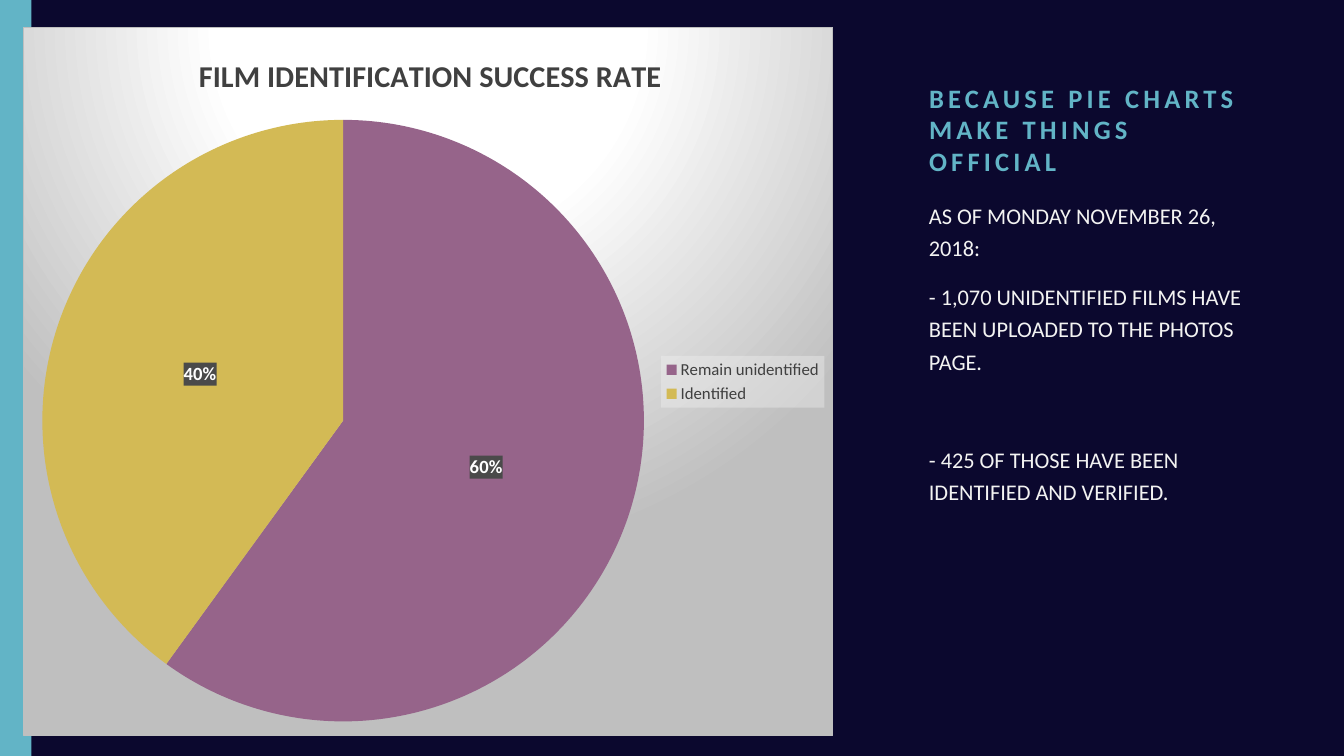
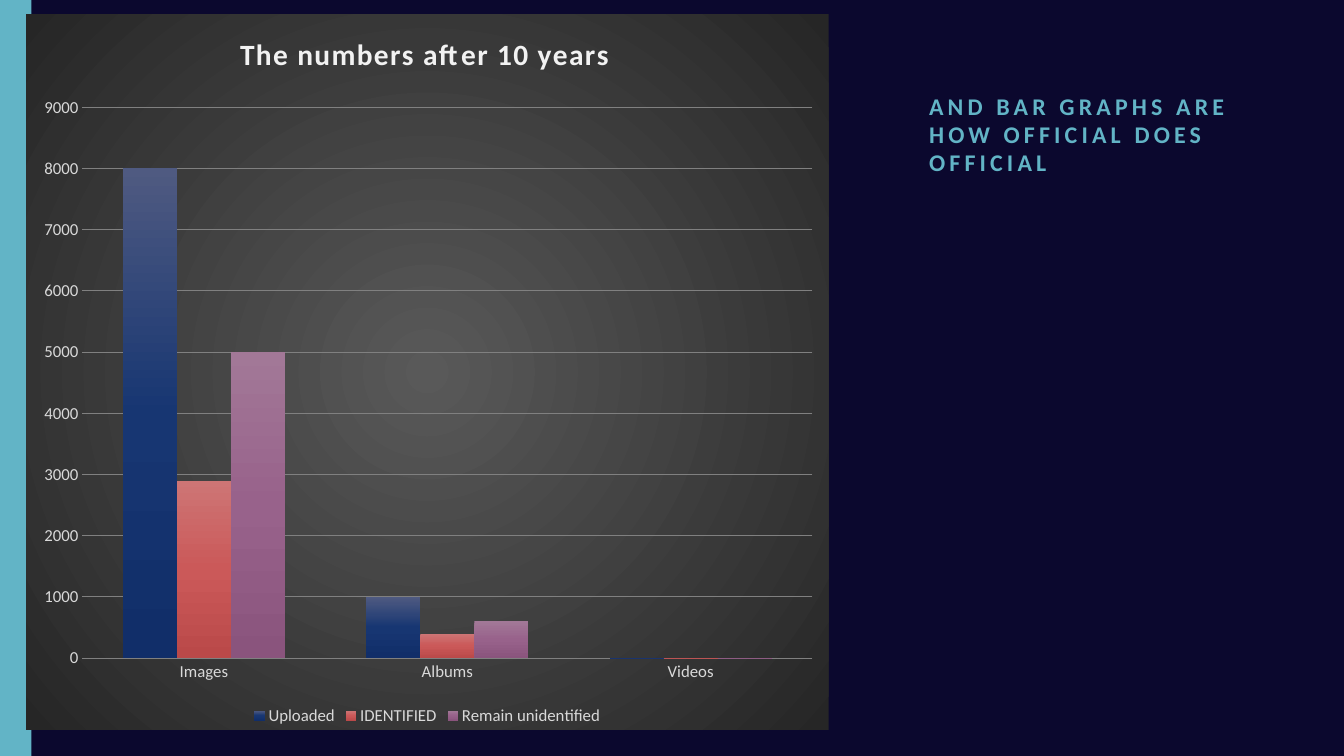
from dataclasses import dataclass
from typing import Any

from lxml.etree import _Element
from pptx import Presentation
from pptx.chart.chart import Chart
from pptx.chart.data import CategoryChartData
from pptx.dml.color import RGBColor
from pptx.enum.chart import XL_CHART_TYPE, XL_LABEL_POSITION, XL_LEGEND_POSITION, XL_TICK_MARK
from pptx.enum.shapes import MSO_SHAPE
from pptx.enum.text import MSO_ANCHOR, MSO_AUTO_SIZE, PP_ALIGN
from pptx.oxml import parse_xml
from pptx.oxml.ns import nsdecls, qn
from pptx.slide import Slide
from pptx.util import Cm, Pt

NAVY = RGBColor(0x0B, 0x08, 0x2E)
TEAL = RGBColor(0x62, 0xB4, 0xC6)
CREAM = RGBColor(0xF3, 0xF3, 0xF2)
PALE = RGBColor(0xF2, 0xF2, 0xF2)
WHITE = RGBColor(0xFF, 0xFF, 0xFF)
SILVER = RGBColor(0xBF, 0xBF, 0xBF)
LIGHT = RGBColor(0xD9, 0xD9, 0xD9)
GREY = RGBColor(0x80, 0x80, 0x80)
SLATE = RGBColor(0x59, 0x59, 0x59)
COAL = RGBColor(0x4A, 0x4A, 0x4A)
DARK = RGBColor(0x40, 0x40, 0x40)
BLACK = RGBColor(0x26, 0x26, 0x26)
MAUVE = RGBColor(0x96, 0x64, 0x8A)
GOLD = RGBColor(0xD3, 0xBA, 0x55)
BLUES = (RGBColor(0x4F, 0x5A, 0x81), RGBColor(0x17, 0x36, 0x72), RGBColor(0x11, 0x2E, 0x69))
REDS = (RGBColor(0xCD, 0x75, 0x75), RGBColor(0xCB, 0x59, 0x59), RGBColor(0xBA, 0x49, 0x49))
PLUMS = (RGBColor(0xA2, 0x78, 0x97), RGBColor(0x98, 0x62, 0x8B), RGBColor(0x8A, 0x54, 0x7D))

FACE = "Calibri"
SIDE = Cm(23.16)
WIDE = Cm(8.59)
BARE = "<a:ln><a:noFill/></a:ln>"

Stops = list[tuple[int, RGBColor]]


@dataclass(frozen=True)
class Box:
    left: float
    top: float
    width: float
    height: float


@dataclass(frozen=True)
class Series:
    name: str
    values: tuple[int, ...]
    shades: tuple[RGBColor, ...] = ()


@dataclass(frozen=True)
class Graph:
    kind: XL_CHART_TYPE
    area: Box
    plot: Box
    groups: tuple[str, ...]
    series: tuple[Series, ...]
    title: str
    size: float
    track: int
    head: tuple[float, float]
    ink: RGBColor
    text: RGBColor
    legend: XL_LEGEND_POSITION
    fill: str
    line: str


def apply(item: Any, **style: Any) -> None:
    for key, value in style.items():
        setattr(item, key, value)


def style(font: Any, size: float, color: RGBColor, bold: bool = False) -> None:
    apply(font, name=FACE, size=Pt(size), bold=bold)
    font.color.rgb = color


def solid(color: RGBColor, alpha: int = 100) -> str:
    return (f'<a:solidFill><a:srgbClr val="{color}"><a:alpha val="{alpha * 1000}"/>'
            "</a:srgbClr></a:solidFill>")


def blend(stops: Stops, shape: str) -> str:
    marks = "".join(f'<a:gs pos="{at * 1000}"><a:srgbClr val="{color}"/></a:gs>'
                    for at, color in stops)
    return f'<a:gradFill rotWithShape="1"><a:gsLst>{marks}</a:gsLst>{shape}</a:gradFill>'


def round_blend(stops: Stops, top: int, base: int) -> str:
    return blend(stops, '<a:path path="circle"><a:fillToRect l="50000" '
                 f't="{top * 1000}" r="50000" b="{base * 1000}"/></a:path>')


def outline(color: RGBColor) -> str:
    return f'<a:ln w="{Pt(0.75)}">{solid(color)}</a:ln>'


def paint(fill: str, line: str = BARE) -> _Element:
    return parse_xml(f'<c:spPr {nsdecls("c", "a")}>{fill}{line}</c:spPr>')


def place(host: _Element, **spots: float) -> None:
    old = host.find(qn("c:layout"))
    if old is not None:
        host.remove(old)
    inner = '<c:layoutTarget val="inner"/>' if "w" in spots else ""
    modes = "".join(f'<c:{key}Mode val="edge"/>' for key in ("x", "y"))
    sizes = "".join(f'<c:{key} val="{value}"/>' for key, value in spots.items())
    new = parse_xml(f'<c:layout {nsdecls("c")}><c:manualLayout>{inner}{modes}{sizes}'
                    "</c:manualLayout></c:layout>")
    text = host.find(qn("c:tx"))
    if text is None:
        host.insert(0, new)
    else:
        text.addnext(new)


def set_title(slide: Slide, text: str, size: float) -> None:
    title = slide.shapes.title
    apply(title, left=SIDE, top=Cm(1.27), width=WIDE, height=Cm(3.33))
    frame = title.text_frame
    frame.text = text
    apply(frame, word_wrap=True, auto_size=MSO_AUTO_SIZE.NONE,
          vertical_anchor=MSO_ANCHOR.BOTTOM)
    line = frame.paragraphs[0]
    apply(line, alignment=PP_ALIGN.LEFT, line_spacing=0.98)
    run = line.runs[0]
    style(run.font, size, TEAL, True)
    run.font._element.set("spc", "300")


def add_body(slide: Slide, lines: list[tuple[str, float]]) -> None:
    frame = slide.shapes.add_textbox(SIDE, Cm(4.83), WIDE, Cm(11.56)).text_frame
    frame.word_wrap = True
    for rank, (text, gap) in enumerate(lines):
        line = frame.add_paragraph() if rank else frame.paragraphs[0]
        apply(line, text=text, line_spacing=1.2, space_before=Pt(gap))
        style(line.runs[0].font, 16, CREAM)


def add_graph(slide: Slide, graph: Graph) -> Chart:
    data = CategoryChartData()
    data.categories = graph.groups
    for item in graph.series:
        data.add_series(item.name, item.values)
    area = graph.area
    chart = slide.shapes.add_chart(graph.kind, Cm(area.left), Cm(area.top),
                                   Cm(area.width), Cm(area.height), data).chart
    style(chart.font, 12, graph.text)
    apply(chart, has_title=True, has_legend=True)
    apply(chart.legend, position=graph.legend, include_in_layout=False)
    style(chart.legend.font, 12, graph.text)
    frame = chart.chart_title.text_frame
    frame.text = graph.title
    run = frame.paragraphs[0].runs[0]
    style(run.font, graph.size, graph.ink, True)
    run.font._element.set("spc", str(graph.track))
    root = chart.element
    left, top = graph.head
    place(root.find(".//" + qn("c:title")), x=left, y=top)
    plot = graph.plot
    place(root.find(".//" + qn("c:plotArea")),
          x=plot.left, y=plot.top, w=plot.width, h=plot.height)
    root.find(qn("c:txPr")).addprevious(paint(graph.fill, graph.line))
    return chart


def dress_pie(chart: Chart) -> None:
    plot = chart.plots[0]
    apply(plot, vary_by_categories=True, has_data_labels=True)
    for rank, color in enumerate((MAUVE, GOLD)):
        fill = plot.series[0].points[rank].format.fill
        fill.solid()
        fill.fore_color.rgb = color
    labels = plot.data_labels
    apply(labels, show_percentage=True, show_value=False, number_format="0%",
          number_format_is_linked=False, position=XL_LABEL_POSITION.CENTER)
    style(labels.font, 13.3, WHITE, True)
    for tag, fill in (("c:dLbls", solid(COAL)), ("c:legend", solid(PALE, 39))):
        host = chart.element.find(".//" + qn(tag))
        host.find(qn("c:txPr")).addprevious(paint(fill))


def dress_bars(chart: Chart, graph: Graph) -> None:
    apply(chart.plots[0], gap_width=150, overlap=0, vary_by_categories=False)
    for node, item in zip(chart.element.iter(qn("c:ser")), graph.series):
        fill = blend(list(zip((0, 50, 100), item.shades)), '<a:lin ang="5400000" scaled="0"/>')
        node.find(qn("c:tx")).addnext(paint(fill))
    for axis in (chart.category_axis, chart.value_axis):
        apply(axis, major_tick_mark=XL_TICK_MARK.NONE, minor_tick_mark=XL_TICK_MARK.NONE)
        style(axis.tick_labels.font, 12, LIGHT)
        axis.format.line.fill.background()
    scale = chart.value_axis
    apply(scale, minimum_scale=0, maximum_scale=9000, major_unit=1000, has_major_gridlines=True)
    grid = scale.major_gridlines.format.line
    grid.width = Pt(0.75)
    grid.color.rgb = GREY


PIE = Graph(
    XL_CHART_TYPE.PIE, Box(0.58, 0.69, 20.42, 17.86), Box(0.02, 0.13, 0.75, 0.85),
    ("Remain unidentified", "Identified"), (Series("Series 1", (60, 40)),),
    "FILM IDENTIFICATION SUCCESS RATE", 21.6, 0, (0.21, 0.03), DARK, DARK,
    XL_LEGEND_POSITION.RIGHT,
    round_blend([(0, WHITE), (39, WHITE), (100, SILVER)], -80, 180), outline(SILVER))

BARS = Graph(
    XL_CHART_TYPE.COLUMN_CLUSTERED, Box(0.66, 0.36, 20.22, 18.03), Box(0.07, 0.13, 0.91, 0.77),
    ("Images", "Albums", "Videos"),
    (Series("Uploaded", (8000, 1000, 0), BLUES),
     Series("IDENTIFIED", (2900, 400, 0), REDS),
     Series("Remain unidentified", (5000, 600, 0), PLUMS)),
    "The numbers after 10 years", 21, 100, (0.26, 0.02), PALE, LIGHT,
    XL_LEGEND_POSITION.BOTTOM,
    round_blend([(0, SLATE), (100, BLACK)], 50, 50), BARE)


def main() -> None:
    deck = Presentation()
    apply(deck, slide_width=Cm(33.87), slide_height=Cm(19.05))
    back = deck.slide_master.background.fill
    back.solid()
    back.fore_color.rgb = NAVY
    layout = deck.slide_layouts[5]
    first, second = (deck.slides.add_slide(layout) for _ in range(2))

    band = first.shapes.add_shape(MSO_SHAPE.RECTANGLE, 0, 0, Cm(0.79), deck.slide_height)
    band.shadow.inherit = False
    band.fill.solid()
    band.fill.fore_color.rgb = TEAL
    band.line.fill.background()
    layout.shapes.element.append(band.element)

    set_title(first, "BECAUSE PIE CHARTS MAKE THINGS OFFICIAL", 19)
    dress_pie(add_graph(first, PIE))
    add_body(first, [
        ("AS OF MONDAY NOVEMBER 26, 2018:", 12),
        ("- 1,070 UNIDENTIFIED FILMS HAVE BEEN UPLOADED TO THE PHOTOS PAGE.", 12),
        ("- 425 OF THOSE HAVE BEEN IDENTIFIED AND VERIFIED.", 47.4),
    ])

    set_title(second, "AND BAR GRAPHS ARE HOW OFFICIAL DOES OFFICIAL", 17.1)
    dress_bars(add_graph(second, BARS), BARS)
    deck.save("out.pptx")


if __name__ == "__main__":
    main()
